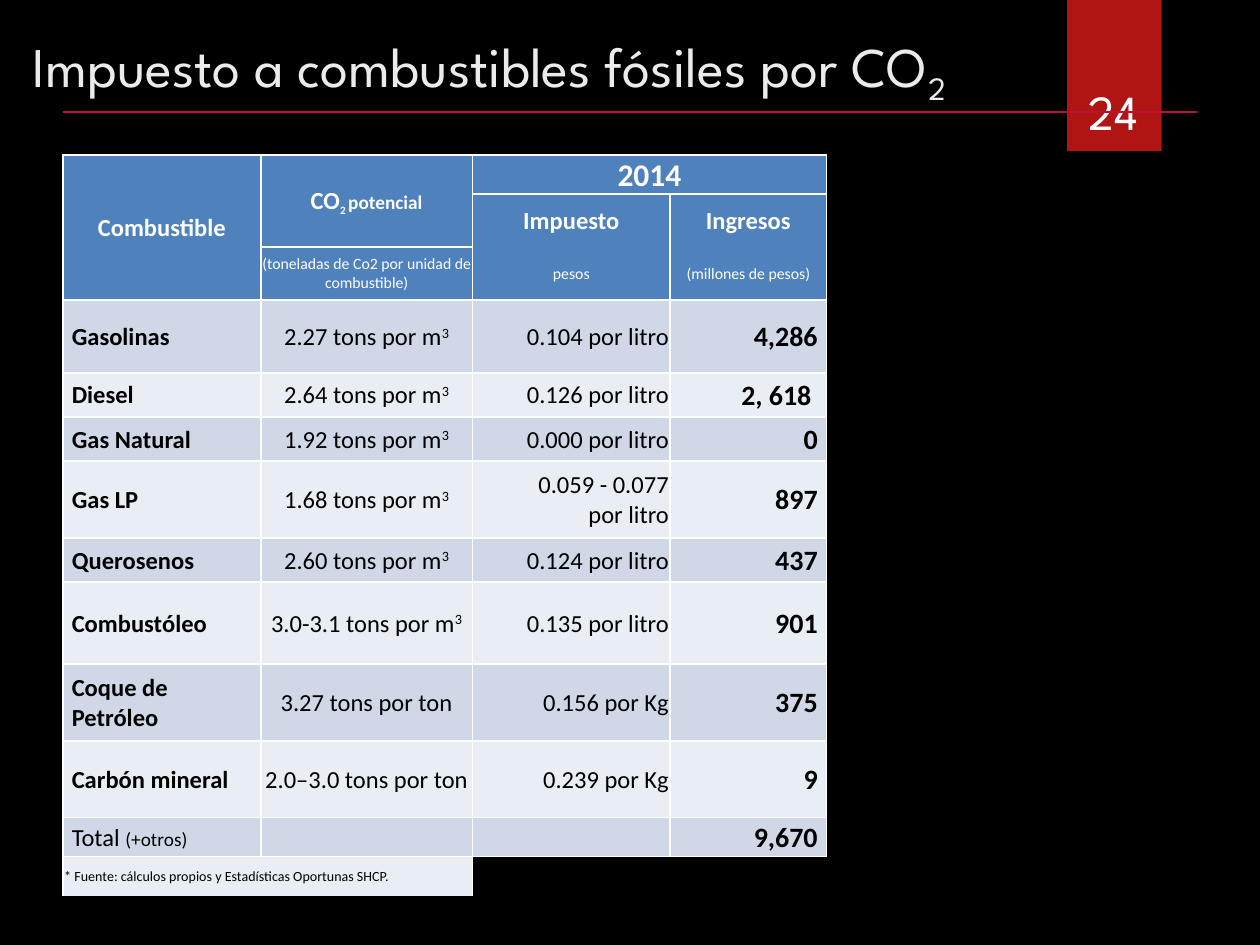
from lxml import etree
from pptx import Presentation
from pptx.dml.color import RGBColor
from pptx.enum.shapes import MSO_CONNECTOR, MSO_SHAPE
from pptx.enum.text import MSO_ANCHOR, PP_ALIGN
from pptx.oxml.ns import qn
from pptx.util import Inches, Pt

LEFT, CENTER, RIGHT = PP_ALIGN.LEFT, PP_ALIGN.CENTER, PP_ALIGN.RIGHT
MIDDLE, BOTTOM = MSO_ANCHOR.MIDDLE, MSO_ANCHOR.BOTTOM
RECTANGLE, STRAIGHT = MSO_SHAPE.RECTANGLE, MSO_CONNECTOR.STRAIGHT

BLACK = RGBColor(0x00, 0x00, 0x00)
WHITE = RGBColor(0xFF, 0xFF, 0xFF)
TITLE_GRAY = RGBColor(0xEB, 0xEB, 0xEB)
RIBBON_RED = RGBColor(0xB0, 0x15, 0x13)
RULE_RED = RGBColor(0xBE, 0x0F, 0x34)
HEADER_BLUE = RGBColor(0x4F, 0x81, 0xBD)
BANDS = (RGBColor(0xD0, 0xD8, 0xE8), RGBColor(0xE9, 0xED, 0xF4))

TITLE_FONT, TABLE_FONT = "League Spartan", "Calibri"
SUBSCRIPT, SUPERSCRIPT = -25, 30

COLUMN_WIDTHS = (1.57, 1.68, 1.57, 1.24)
ROW_HEIGHTS = (0.31, 0.42, 0.42, 0.58, 0.35, 0.35, 0.61, 0.35, 0.65, 0.61, 0.61, 0.31, 0.19)
HEADER_ROWS = 3
TOTAL_ROW = len(ROW_HEIGHTS) - 2
SOURCE_ROW = TOTAL_ROW + 1

# row, column, runs, size, bold
HEADERS = [
    (0, 0, ["Combustible"], 14, True),
    (0, 1, ["CO", ("2 ", 11, SUBSCRIPT), ("potencial", 11, 0)], 14, True),
    (0, 2, ["2014"], 18, True),
    (1, 2, ["Impuesto"], 14, True),
    (1, 3, ["Ingresos"], 14, True),
    (2, 1, ["(toneladas de Co2 por unidad de combustible)"], 9, False),
    (2, 2, ["pesos"], 9, False),
    (2, 3, ["(millones de pesos)"], 9, False),
]

# fuel, potential, unit exponent, tax lines, income
FUELS = [
    ("Gasolinas", "2.27 tons por m", "3", ["0.104 por litro"], "4,286"),
    ("Diesel", "2.64 tons por m", "3", ["0.126 por litro"], "2, 618 "),
    ("Gas Natural", "1.92 tons por m", "3", ["0.000 por litro"], "0"),
    ("Gas LP", "1.68 tons por m", "3", ["0.059 - 0.077", " por litro"], "897"),
    ("Querosenos", "2.60 tons por m", "3", ["0.124 por litro"], "437"),
    ("Combustóleo", "3.0-3.1 tons por m", "3", ["0.135 por litro"], "901"),
    ("Coque de Petróleo", "3.27 tons por ton", "", ["0.156 por Kg"], "375"),
    ("Carbón mineral", "2.0–3.0 tons por ton", "", ["0.239 por Kg"], "9"),
]


def write_paragraph(paragraph, runs, size, color, font=TABLE_FONT, bold=False, align=LEFT):
    """Each run is a string or a (text, size, baseline) tuple."""
    paragraph.alignment = align
    paragraph.font.name = font
    paragraph.font.size = Pt(size)
    paragraph.font.bold = bold
    paragraph.font.color.rgb = color
    for item in runs:
        text, run_size, baseline = (item, None, 0) if isinstance(item, str) else item
        run = paragraph.add_run()
        run.text = text
        if run_size:
            run.font.size = Pt(run_size)
        if baseline:
            run.font._element.set("baseline", str(baseline * 1000))


def add_text(slide, box, runs, size, color, anchor, align=LEFT):
    frame = slide.shapes.add_textbox(*map(Inches, box)).text_frame
    frame.word_wrap = True
    frame.vertical_anchor = anchor
    write_paragraph(frame.paragraphs[0], runs, size, color, TITLE_FONT, align=align)


def add_ribbon(slide):
    ribbon = slide.shapes.add_shape(RECTANGLE, Inches(8.47), 0, Inches(0.75), Inches(1.2))
    ribbon.shadow.inherit = False
    ribbon.fill.solid()
    ribbon.fill.fore_color.rgb = RIBBON_RED
    ribbon.line.fill.background()


def add_rule(slide):
    rule = slide.shapes.add_connector(STRAIGHT, Inches(0.5), Inches(0.89), Inches(9.5), Inches(0.89))
    rule.line.color.rgb = RULE_RED
    rule.line.width = Pt(1.5)
    etree.SubElement(rule._element.spPr, qn("a:effectLst"))


def border_widths(row, column):
    """Widths in points of the left, right, top and bottom borders; 0 is none."""
    if row == SOURCE_ROW and column >= 2:
        return (1 if column == 2 else 0), 0, 1, 0
    top = bottom = 1
    if row == HEADER_ROWS - 1:
        top, bottom = 0, 1.5
    elif row == HEADER_ROWS:
        top = 1.5
    elif row == 1:
        top, bottom = (1.5 if column == 3 else 1), 0
    elif row == 0 and column == 3:
        bottom = 1.5
    elif row == SOURCE_ROW:
        bottom = 0
    return 1, 1, top, bottom


def set_borders(cell, widths):
    properties = cell._tc.get_or_add_tcPr()
    for side, width in zip("LRTB", widths):
        line = etree.SubElement(properties, qn(f"a:ln{side}"), w=str(Pt(width)))
        if width:
            fill = etree.SubElement(line, qn("a:solidFill"))
            etree.SubElement(fill, qn("a:srgbClr"), val=str(WHITE))
        else:
            etree.SubElement(line, qn("a:noFill"))


def format_cell(cell, row, column):
    set_borders(cell, border_widths(row, column))
    if row == SOURCE_ROW and column >= 2:
        cell.fill.background()
    else:
        cell.fill.solid()
        body_band = BANDS[(row - HEADER_ROWS) % 2]
        cell.fill.fore_color.rgb = HEADER_BLUE if row < HEADER_ROWS else body_band
    is_body = HEADER_ROWS <= row < SOURCE_ROW
    cell.margin_left = Inches(0.07 if is_body and column == 0 else 0.01)
    cell.margin_right = Inches(0.07 if is_body and column == 3 else 0.01)
    cell.margin_top, cell.margin_bottom = Inches(0.01), 0
    cell.vertical_anchor = MIDDLE


def fill_cell(cell, lines, size, color=BLACK, bold=False, align=LEFT):
    frame = cell.text_frame
    for index, runs in enumerate(lines):
        paragraph = frame.add_paragraph() if index else frame.paragraphs[0]
        write_paragraph(paragraph, runs, size, color, bold=bold, align=align)


def add_fuel_table(slide):
    table = slide.shapes.add_table(
        len(ROW_HEIGHTS), len(COLUMN_WIDTHS), Inches(0.5), Inches(1.23),
        Inches(sum(COLUMN_WIDTHS)), Inches(sum(ROW_HEIGHTS))).table
    table.first_row = table.horz_banding = False
    for column, width in zip(table.columns, COLUMN_WIDTHS):
        column.width = Inches(width)
    for row, height in enumerate(ROW_HEIGHTS):
        table.rows[row].height = Inches(height)
        for column in range(len(COLUMN_WIDTHS)):
            format_cell(table.cell(row, column), row, column)

    # Merged cells: first row and column to last row and column
    for first, last in (((0, 0), (2, 0)), ((0, 1), (1, 1)), ((0, 2), (0, 3)),
                        ((SOURCE_ROW, 0), (SOURCE_ROW, 1))):
        table.cell(*first).merge(table.cell(*last))

    # Header
    for row, column, runs, size, bold in HEADERS:
        fill_cell(table.cell(row, column), [runs], size, WHITE, bold, CENTER)

    # Fuels
    for row, (fuel, potential, exponent, tax, income) in enumerate(FUELS, HEADER_ROWS):
        amount = [potential, (exponent, None, SUPERSCRIPT)] if exponent else [potential]
        fill_cell(table.cell(row, 0), [[fuel]], 14, bold=True)
        fill_cell(table.cell(row, 1), [amount], 14, align=CENTER)
        fill_cell(table.cell(row, 2), [[line] for line in tax], 14, align=RIGHT)
        fill_cell(table.cell(row, 3), [[income]], 16, bold=True, align=RIGHT)

    # Total and source
    fill_cell(table.cell(TOTAL_ROW, 0), [["Total ", ("(+otros)", 11, 0)]], 14)
    fill_cell(table.cell(TOTAL_ROW, 3), [["9,670"]], 16, bold=True, align=RIGHT)
    source = "* Fuente: cálculos propios y Estadísticas Oportunas SHCP."
    fill_cell(table.cell(SOURCE_ROW, 0), [[source]], 8)
    for column in (1, 2, 3):
        fill_cell(table.cell(SOURCE_ROW, column), [[""]], 8)


def main():
    presentation = Presentation()
    presentation.slide_width, presentation.slide_height = Inches(10), Inches(7.5)
    slide = presentation.slides.add_slide(presentation.slide_layouts[6])
    slide.background.fill.solid()
    slide.background.fill.fore_color.rgb = BLACK

    add_ribbon(slide)
    title = ["Impuesto a combustibles fósiles por CO", ("2", None, SUBSCRIPT)]
    add_text(slide, (0.16, 0.23, 9, 0.64), title, 32, TITLE_GRAY, MIDDLE)
    add_text(slide, (8.49, 0.32, 0.69, 0.84), ["24"], 28, WHITE, BOTTOM, CENTER)
    add_rule(slide)
    add_fuel_table(slide)
    presentation.save("out.pptx")


if __name__ == "__main__":
    main()
